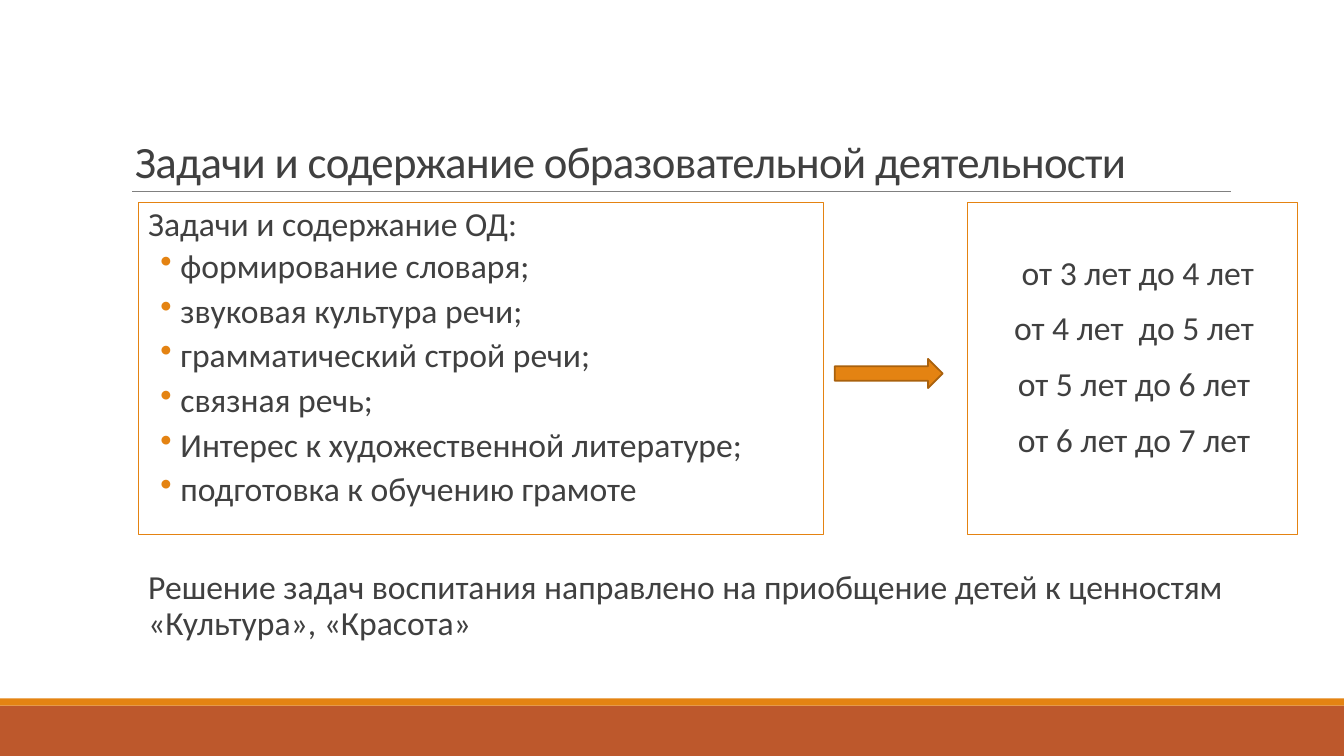
"""Builds a slide on the goals and content of educational activity."""
from lxml import etree
from pptx import Presentation
from pptx.dml.color import RGBColor
from pptx.enum.shapes import MSO_CONNECTOR, MSO_SHAPE
from pptx.enum.text import MSO_ANCHOR, PP_ALIGN
from pptx.oxml.ns import qn
from pptx.util import Inches, Pt

TITLE = "Задачи и содержание образовательной деятельности"
GOALS_HEADING = "Задачи и содержание ОД:"
GOALS = [
    "формирование словаря;",
    "звуковая культура речи;",
    "грамматический строй речи;",
    "связная речь;",
    "Интерес к художественной литературе;",
    "подготовка к обучению грамоте",
]
AGES = [
    "от 3 лет до 4 лет",
    "от 4 лет  до 5 лет ",
    "от 5 лет до 6 лет ",
    "от 6 лет до 7 лет ",
]
CLOSING = (
    "Решение задач воспитания направлено на приобщение детей "
    "к ценностям «Культура», «Красота»"
)

FONT = "Calibri"
TEXT = RGBColor(0x40, 0x40, 0x40)
RULE = RGBColor(0x80, 0x80, 0x80)
ORANGE = RGBColor(0xE4, 0x83, 0x12)
DARK_ORANGE = RGBColor(0xA9, 0x61, 0x0D)
RUST = RGBColor(0xBD, 0x58, 0x2C)
TOP, MIDDLE, BOTTOM = MSO_ANCHOR.TOP, MSO_ANCHOR.MIDDLE, MSO_ANCHOR.BOTTOM
LEFT, CENTER = PP_ALIGN.LEFT, PP_ALIGN.CENTER
RECTANGLE, ARROW = MSO_SHAPE.RECTANGLE, MSO_SHAPE.RIGHT_ARROW

WIDTH, HEIGHT = 13.33, 7.5
FOOTER_TOP, STRIPE = 7, 0.07
PANEL_TOP, PANEL_HEIGHT = 2.01, 3.29
GOALS_LEFT, GOALS_WIDTH = 1.37, 6.8
AGES_LEFT, AGES_WIDTH = 9.6, 3.27
AGES_INSET = 0.53


def add_shape(page, kind, area, fill=None, line=None, weight=0.75):
    shape = page.shapes.add_shape(kind, *map(Inches, area))
    shape.shadow.inherit = False
    if fill is None:
        shape.fill.background()
    else:
        shape.fill.solid()
        shape.fill.fore_color.rgb = fill
    if line is None:
        shape.line.fill.background()
    else:
        shape.line.color.rgb = line
        shape.line.width = Pt(weight)
    return shape


def set_frame(shape, anchor, side=0, top=0.05):
    frame = shape.text_frame
    frame.word_wrap = True
    frame.vertical_anchor = anchor
    frame.margin_left = frame.margin_right = Inches(side)
    frame.margin_top, frame.margin_bottom = Inches(top), Inches(0.05)
    return frame


def add_para(frame, text, size=24, align=LEFT, spacing=0.9, before=12, after=2,
             margin=0.1, hanging=0.0):
    first = frame.paragraphs[0]
    para = frame.add_paragraph() if first.runs else first
    para.alignment = align
    para.line_spacing = spacing
    para.space_before, para.space_after = Pt(before), Pt(after)
    properties = para._p.get_or_add_pPr()
    properties.set("marL", str(Inches(margin)))
    properties.set("indent", str(-Inches(hanging)))
    if hanging:
        color = etree.SubElement(properties, qn("a:buClr"))
        etree.SubElement(color, qn("a:srgbClr"), val=str(ORANGE))
        etree.SubElement(properties, qn("a:buChar"), char="•")
    span = para.add_run()
    span.text = text
    span.font.name = FONT
    span.font.size = Pt(size)
    span.font.color.rgb = TEXT
    return span


def add_text_box(page, area, anchor, side=0):
    return set_frame(page.shapes.add_textbox(*map(Inches, area)), anchor, side)


def main():
    deck = Presentation()
    deck.slide_width, deck.slide_height = Inches(WIDTH), Inches(HEIGHT)
    page = deck.slides.add_slide(deck.slide_layouts[6])

    add_shape(page, RECTANGLE, (0, FOOTER_TOP, WIDTH, HEIGHT - FOOTER_TOP), RUST)
    add_shape(page, RECTANGLE, (0, FOOTER_TOP - STRIPE, WIDTH, STRIPE), ORANGE)
    rule = page.shapes.add_connector(
        MSO_CONNECTOR.STRAIGHT, Inches(1.31), Inches(1.9), Inches(12.21), Inches(1.9))
    rule.line.color.rgb = RULE
    rule.line.width = Pt(0.5)
    etree.SubElement(rule._element.spPr, qn("a:effectLst"))

    title = add_text_box(page, (1.24, 0.6, 11, 1.31), BOTTOM, side=0.1)
    span = add_para(title, TITLE, size=32, spacing=0.85, before=0, after=0, margin=0)
    span.font._element.set("spc", "-50")

    closing = add_text_box(page, (GOALS_LEFT, 5.53, 11.32, 0.97), MIDDLE)
    add_para(closing, CLOSING)

    goals_box = add_shape(
        page, RECTANGLE, (GOALS_LEFT, PANEL_TOP, GOALS_WIDTH, PANEL_HEIGHT), line=ORANGE)
    goals = set_frame(goals_box, TOP)
    add_para(goals, GOALS_HEADING)
    for goal in GOALS:
        add_para(goals, goal, before=2, after=4, margin=0.42, hanging=0.2)

    add_shape(page, ARROW, (8.28, 3.56, 1.07, 0.29), ORANGE, DARK_ORANGE, 1.25)

    ages_box = add_shape(
        page, RECTANGLE, (AGES_LEFT, PANEL_TOP, AGES_WIDTH, PANEL_HEIGHT), line=ORANGE)
    ages = set_frame(ages_box, TOP, top=AGES_INSET)
    for age in AGES:
        add_para(ages, age, align=CENTER)

    deck.save("out.pptx")


if __name__ == "__main__":
    main()
